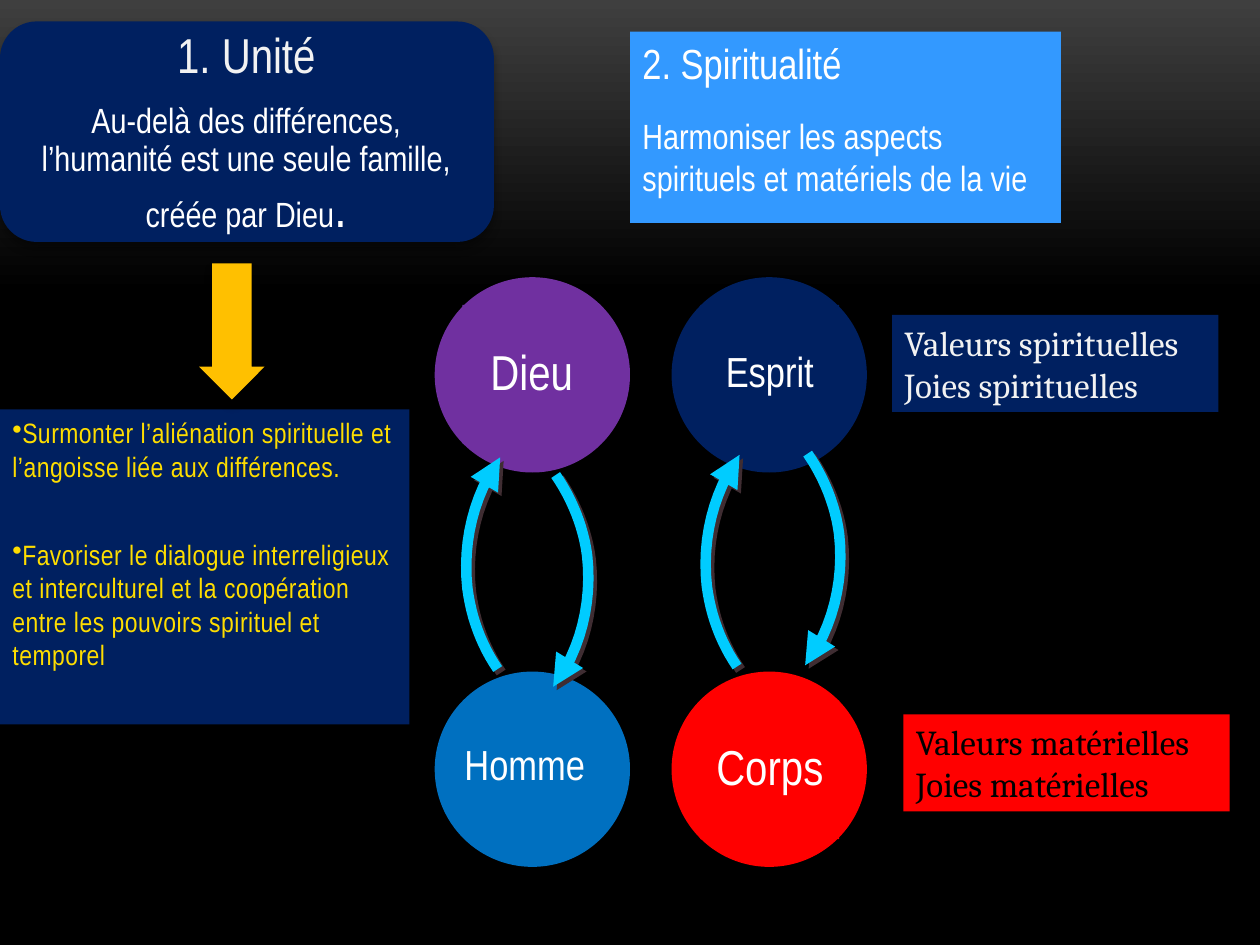
from lxml import etree
from pptx import Presentation
from pptx import util as u
from pptx.dml.color import RGBColor
from pptx.enum import shapes, text
from pptx.oxml.ns import qn

COLORS = {
    "navy": "002060", "violet": "7030A0", "blue": "0070C0", "red": "FF0000",
    "sky": "3399FF", "cyan": "00CCFF", "gold": "FFC000", "yellow": "FEDD00",
    "white": "FFFFFF", "pale": "F2F2F2", "black": "000000", "grey": "3F3F3F",
    "brown": "3F2D32",
}
NARROW, SERIF = "Arial Narrow", "Cambria"
SOFT = {"color": "black", "alpha": 35, "blur": 5, "dist": 4, "angle": 90}
HARD = {"color": "brown", "alpha": 100, "blur": 0, "dist": 2.8, "angle": 45}
CENTERED = {"alignment": text.PP_ALIGN.CENTER, "line_spacing": 0.9}


def rgb(name):
    return RGBColor.from_string(COLORS[name])


def set_all(target, values):
    for name, value in values.items():
        setattr(target, name, value)


def curve_points(start, *segments, steps=12):
    """Sample a chain of cubic Bézier segments, each given as three points."""
    points = [start]
    for first, second, end in segments:
        origin = points[-1]
        for step in range(1, steps + 1):
            t = step / steps
            weights = ((1 - t) ** 3, 3 * t * (1 - t) ** 2, 3 * t * t * (1 - t), t ** 3)
            corners = (origin, first, second, end)
            points.append(tuple(sum(w * c[axis] for w, c in zip(weights, corners))
                                for axis in (0, 1)))
    return points


class Painter:
    def __init__(self, page):
        self.page = page

    def background(self, stops, angle):
        fill = self.page.background.fill
        fill.gradient()
        fill.gradient_angle = angle
        for stop, (position, color) in zip(fill.gradient_stops, stops):
            stop.position = position
            stop.color.rgb = rgb(color)

    def shadow(self, shape, style):
        shape.shadow.inherit = False
        if not style:
            return
        effects = shape.element.spPr.find(qn("a:effectLst"))
        outer = etree.SubElement(effects, qn("a:outerShdw"), {
            "blurRad": str(u.Pt(style["blur"])), "dist": str(u.Pt(style["dist"])),
            "dir": str(style["angle"] * 60000), "algn": "ctr", "rotWithShape": "0"})
        color = etree.SubElement(outer, qn("a:srgbClr"), val=COLORS[style["color"]])
        etree.SubElement(color, qn("a:alpha"), val=str(style["alpha"] * 1000))

    def shape(self, kind, place, color, shadow=None):
        shape = self.page.shapes.add_shape(kind, *map(u.Inches, place))
        shape.fill.solid()
        shape.fill.fore_color.rgb = rgb(color)
        shape.line.fill.background()
        self.shadow(shape, shadow)
        return shape

    def panel(self, place, color):
        return self.shape(shapes.MSO_SHAPE.RECTANGLE, place, color)

    def text_box(self, place):
        return self.page.shapes.add_textbox(*map(u.Inches, place))

    def add_text(self, box, paragraphs, **frame_format):
        """Fill a box with (paragraph format, spans); a span is (words, size, font, color)."""
        frame = box.text_frame
        set_all(frame, {"word_wrap": True, "vertical_anchor": text.MSO_ANCHOR.TOP,
                        **frame_format})
        for index, (style, spans) in enumerate(paragraphs):
            para = frame.paragraphs[0] if index == 0 else frame.add_paragraph()
            set_all(para, {"alignment": text.PP_ALIGN.LEFT, **style})
            for words, size, font, color in spans:
                span = para.add_run()
                span.text = words
                set_all(span.font, {"size": u.Pt(size), "name": font})
                span.font.color.rgb = rgb(color)
        return frame

    def bullets(self, frame, color, tracking):
        for para in frame.paragraphs:
            properties = para._p.get_or_add_pPr()
            properties.set("marL", "0")
            properties.set("indent", "0")
            bullet_color = etree.SubElement(properties, qn("a:buClr"))
            etree.SubElement(bullet_color, qn("a:srgbClr"), val=COLORS[color])
            etree.SubElement(properties, qn("a:buChar"), char="•")
            for span in para.runs:
                span._r.get_or_add_rPr().set("spc", str(round(tracking * 100)))

    def circle(self, left, top, color, label_place, label, size):
        self.shape(shapes.MSO_SHAPE.OVAL, (left, top, 1.55, 1.55), color, SOFT)
        margins = {f"margin_{side}": u.Inches(0.04)
                   for side in ("left", "right", "top", "bottom")}
        self.add_text(self.panel(label_place, color),
                      [(CENTERED, [(label, size, NARROW, "white")])],
                      vertical_anchor=text.MSO_ANCHOR.MIDDLE, **margins)

    def curved_arrow(self, start, *segments):
        points = [tuple(map(u.Inches, point)) for point in curve_points(start, *segments)]
        builder = self.page.shapes.build_freeform(*points[0])
        builder.add_line_segments(points[1:], close=False)
        arrow = builder.convert_to_shape()
        arrow.fill.background()
        arrow.line.color.rgb = rgb("cyan")
        arrow.line.width = u.Pt(6)
        etree.SubElement(arrow.element.spPr.find(qn("a:ln")), qn("a:tailEnd"),
                         type="triangle")
        self.shadow(arrow, HARD)

    def rising_arrow(self, x, y):
        self.curved_arrow(
            (x, y),
            ((x - 0.13, y - 0.19), (x - 0.21, y - 0.41), (x - 0.24, y - 0.64)),
            ((x - 0.28, y - 1.01), (x - 0.19, y - 1.38), (x + 0.02, y - 1.68)))

    def falling_arrow(self, x, y):
        self.curved_arrow(
            (x, y),
            ((x + 0.13, y + 0.19), (x + 0.22, y + 0.41), (x + 0.25, y + 0.64)),
            ((x + 0.29, y + 1.01), (x + 0.2, y + 1.39), (x - 0.02, y + 1.68)))

    def values(self, left, top, color, font_color, lines):
        self.add_text(self.panel((left, top, 2.59, 0.77), color),
                      [({}, [(line, 20, SERIF, font_color)]) for line in lines],
                      word_wrap=False)


def main():
    deck = Presentation()
    deck.slide_width, deck.slide_height = u.Inches(10), u.Inches(7.5)
    page = deck.slides.add_slide(deck.slide_layouts[6])
    painter = Painter(page)
    painter.background([(0, "grey"), (0.31, "black")], 270)

    goals = ["Surmonter l’aliénation spirituelle et l’angoisse liée aux différences.",
             "Favoriser le dialogue interreligieux et interculturel et la coopération "
             "entre les pouvoirs spirituel et temporel"]
    frame = painter.add_text(
        painter.panel((0, 3.25, 3.25, 2.5), "navy"),
        [({"space_after": u.Pt(31)}, [(goal, 16, NARROW, "yellow")]) for goal in goals])
    painter.bullets(frame, "yellow", 0.3)

    left, right, upper, lower = 3.45, 5.33, 2.2, 5.33
    painter.circle(left, upper, "violet", (3.67, 2.42, 1.1, 1.1), "Dieu", 28)
    painter.circle(left, lower, "blue", (3.58, 5.75, 1.17, 0.67), "Homme", 24)
    painter.rising_arrow(3.95, 5.31)
    painter.falling_arrow(4.41, 3.77)
    painter.circle(right, upper, "navy", (5.56, 2.42, 1.1, 1.1), "Esprit", 24)
    painter.circle(right, lower, "red", (5.56, 5.56, 1.1, 1.1), "Corps", 28)
    painter.rising_arrow(5.85, 5.29)
    painter.falling_arrow(6.41, 3.6)

    painter.add_text(painter.panel((5, 0.25, 3.42, 1.52), "sky"), [
        ({"space_after": u.Pt(10)}, [("2. Spiritualité", 24, NARROW, "white")]),
        ({"space_before": u.Pt(5)},
         [("Harmoniser les aspects spirituels et matériels de la vie", 20, NARROW, "white")]),
    ])
    painter.values(7.08, 2.5, "navy", "pale", ["Valeurs spirituelles", "Joies spirituelles"])
    painter.values(7.17, 5.67, "red", "black", ["Valeurs matérielles", "Joies matérielles"])

    painter.shape(shapes.MSO_SHAPE.ROUNDED_RECTANGLE, (0, 0.17, 3.92, 1.75), "navy", SOFT)
    painter.add_text(painter.text_box((0.12, 0.25, 3.67, 1.57)), [
        ({**CENTERED, "space_after": u.Pt(11)}, [("1. Unité", 28, NARROW, "pale")]),
        (CENTERED, [("Au-delà des différences, l’humanité est une seule famille, "
                     "créée par Dieu", 20, NARROW, "white"), (".", 32, NARROW, "white")]),
    ], margin_left=u.Inches(0.13), margin_right=u.Inches(0.13), margin_top=0)

    arrow = painter.shape(shapes.MSO_SHAPE.RIGHT_ARROW, (1.3, 2.37, 1.08, 0.52), "gold", SOFT)
    arrow.rotation = 90
    arrow.adjustments[0] = 0.6

    deck.save("out.pptx")


if __name__ == "__main__":
    main()
